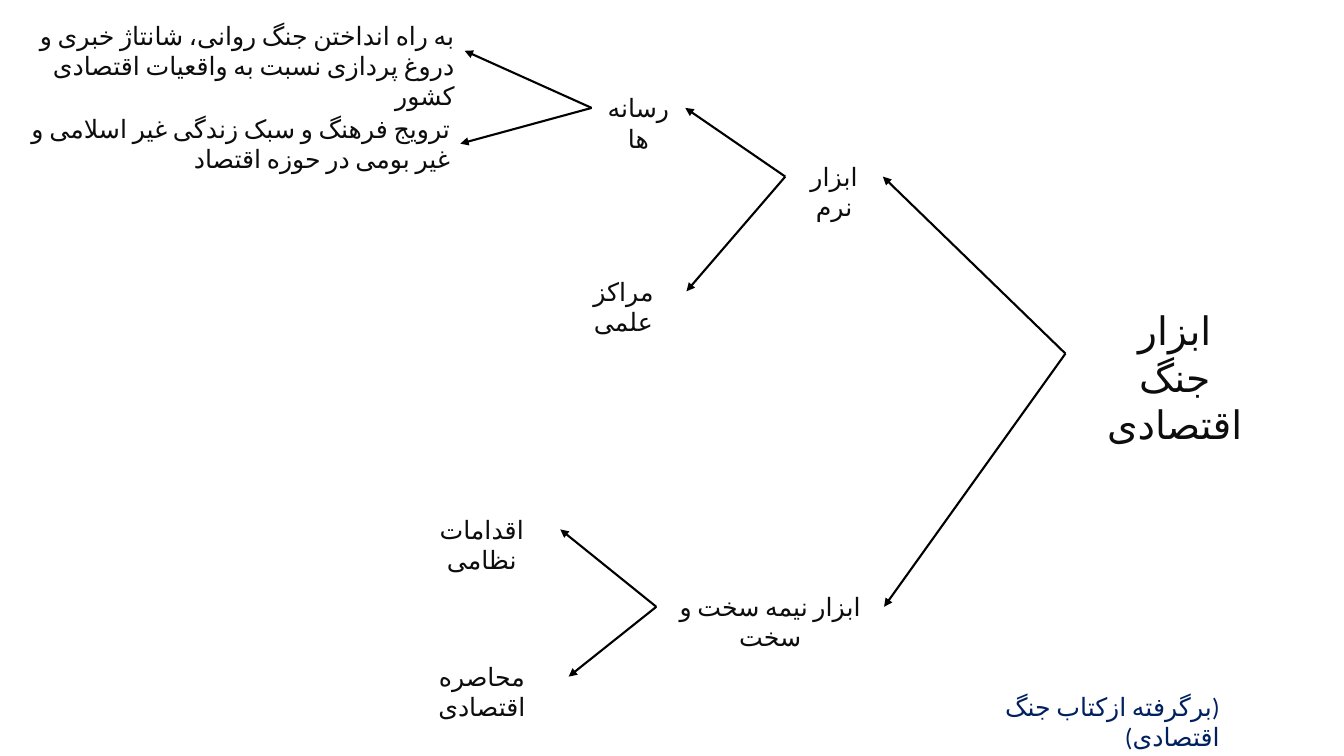
import pptx
import pptx.util
import pptx.dml.color
import pptx.enum.text
import pptx.enum.lang
import pptx.enum.shapes
import pptx.oxml
import pptx.oxml.ns

Cm, Pt = pptx.util.Cm, pptx.util.Pt
ALIGN = pptx.enum.text.PP_ALIGN
INK = {"text": "0D0D0D", "note": "002060", "line": "000000"}

ROOT = ("ابزار\nجنگ اقتصادی", (26.85, 7.59, 5.51, 2.64))
NODES = {
    "soft": ("ابزار نرم", (19.79, 3.94, 2.46, 1.02)),
    "hard": ("ابزار نیمه سخت و سخت", (16.54, 14.78, 5.74, 1.02)),
    "media": ("رسانه ها", (14.91, 2.21, 2.36, 1.02)),
    "study": ("مراکز علمی", (14.12, 6.83, 3.18, 1.02)),
    "army": ("اقدامات نظامی", (10.16, 12.83, 3.96, 1.02)),
    "siege": ("محاصره اقتصادی", (9.96, 16.54, 4.37, 1.02)),
}
LEAVES = {
    "rumour": ("به راه انداختن جنگ روانی، شانتاژ خبری و دروغ پردازی نسبت به "
               "واقعیات اقتصادی کشور", (0.36, 0.38, 11.35, 1.8)),
    "culture": ("ترویج فرهنگ و سبک زندگی غیر اسلامی و غیر بومی در حوزه اقتصاد",
                (0.25, 2.72, 11.35, 1.8)),
}
NOTE = ("(برگرفته ازکتاب جنگ اقتصادی)", (25.02, 17.3, 5.97, 1.02))
TREE = {
    "root": ("soft", "hard"),
    "soft": ("media", "study"),
    "media": ("rumour", "culture"),
    "hard": ("army", "siege"),
}


def write(shape, text, box, size=18, ink="text", align=ALIGN.CENTER):
    shape.left, shape.top, shape.width, shape.height = map(Cm, box)
    frame = shape.text_frame
    frame.word_wrap = True
    frame.auto_size = pptx.enum.text.MSO_AUTO_SIZE.SHAPE_TO_FIT_TEXT
    frame.vertical_anchor = pptx.enum.text.MSO_ANCHOR.TOP
    frame.text = text
    for para in frame.paragraphs:
        para.alignment = align
        para._p.get_or_add_pPr().set("rtl", "1")
        for run in para.runs:
            font = run.font
            font.size, font.name = Pt(size), "Calibri"
            font.language_id = pptx.enum.lang.MSO_LANGUAGE_ID.FARSI
            font.color.rgb = pptx.dml.color.RGBColor.from_string(INK[ink])
            script = pptx.oxml.parse_xml(
                '<a:cs %s typeface="Calibri"/>' % pptx.oxml.ns.nsdecls("a"))
            run._r.get_or_add_rPr().append(script)


def link(slide, start, end):
    left, top, _, high = start
    x, y, wide, tall = end
    arrow = slide.shapes.add_connector(
        pptx.enum.shapes.MSO_CONNECTOR.STRAIGHT,
        Cm(left), Cm(top + high / 2), Cm(x + wide), Cm(y + tall / 2))
    arrow.line.width = Pt(1.5)
    arrow.line.color.rgb = pptx.dml.color.RGBColor.from_string(INK["line"])
    space = pptx.oxml.ns.nsdecls("a")
    arrow.line._get_or_add_ln().append(
        pptx.oxml.parse_xml('<a:tailEnd %s type="triangle"/>' % space))
    arrow._element.spPr.append(
        pptx.oxml.parse_xml('<a:effectLst %s/>' % space))


def main():
    deck = pptx.Presentation()
    deck.slide_width, deck.slide_height = Cm(33.87), Cm(19.05)
    slide = deck.slides.add_slide(deck.slide_layouts[5])
    write(slide.shapes.title, *ROOT, size=28)

    def label(text, box, **style):
        write(slide.shapes.add_textbox(0, 0, 0, 0), text, box, **style)

    for text, box in NODES.values():
        label(text, box)
    for text, box in LEAVES.values():
        label(text, box, align=ALIGN.RIGHT)
    label(*NOTE, ink="note", align=ALIGN.RIGHT)

    parts = {"root": ROOT, **NODES, **LEAVES}
    for stem, twigs in TREE.items():
        for twig in twigs:
            link(slide, parts[stem][1], parts[twig][1])
    deck.save("out.pptx")


if __name__ == "__main__":
    main()
